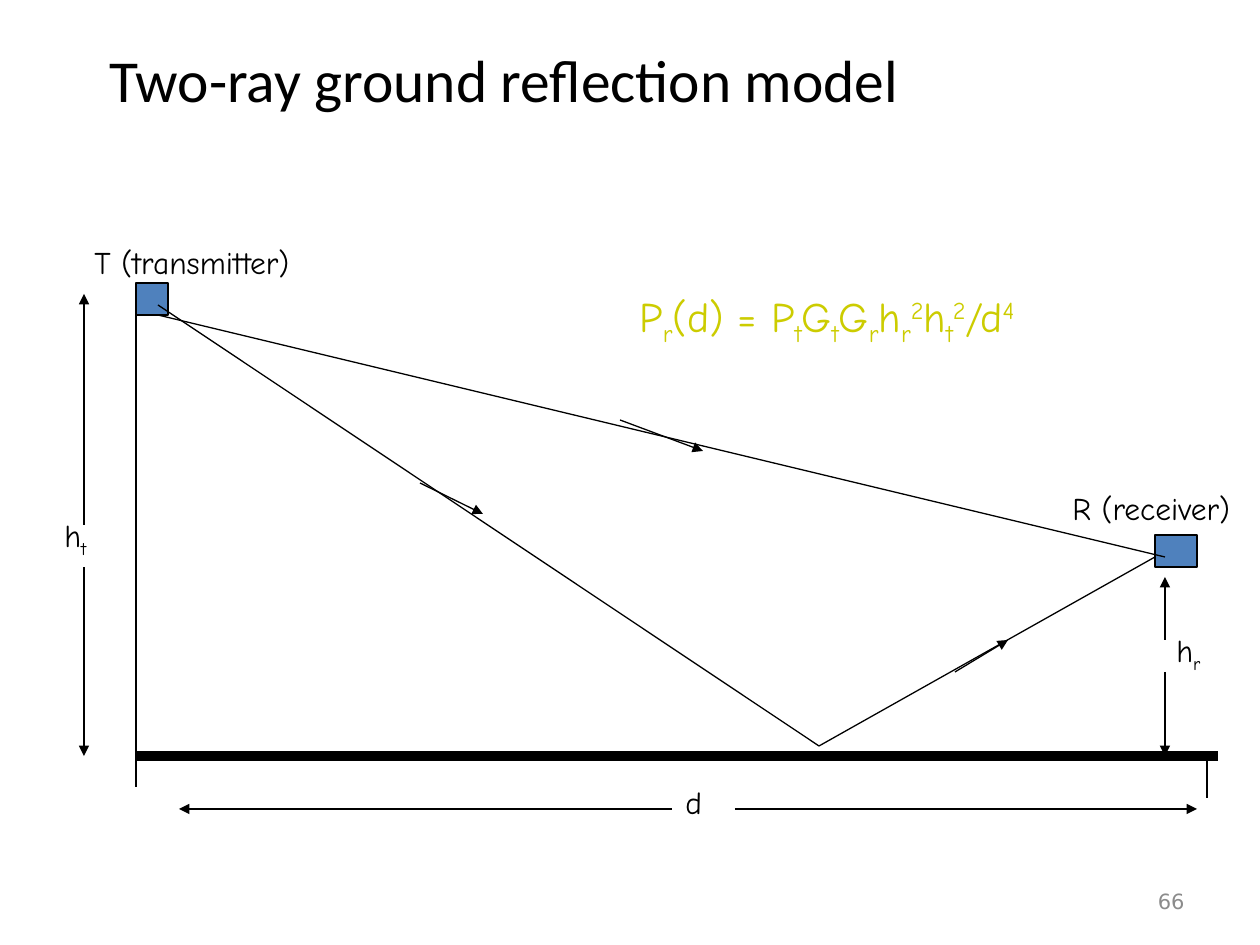
import pptx
import pptx.util
import pptx.dml.color
import pptx.enum.shapes
import pptx.enum.text
import pptx.oxml.ns
from lxml import etree

EMU_PER_PX = 914400 / 126
COLORS = {"ink": "000000", "node": "4F81BD", "formula": "CCCC00", "number": "8B8B8B"}
BASELINES = {"_": "-25000", "^": "30000"}
ALIGN = pptx.enum.text.PP_ALIGN
ANCHOR = pptx.enum.text.MSO_ANCHOR


def px(*lengths):
    return [pptx.util.Emu(round(length * EMU_PER_PX)) for length in lengths]


def write(shape, text, size=18, font="Comic Neue", color="ink", align=ALIGN.LEFT, anchor=ANCHOR.TOP):
    """Write one paragraph; _ lowers and ^ raises the character that follows."""
    frame = shape.text_frame
    frame.word_wrap = True
    frame.vertical_anchor = anchor
    paragraph = frame.paragraphs[0]
    paragraph.alignment = align
    pieces = [["", ""]]
    for character in text:
        if character in BASELINES:
            pieces.append([character, ""])
        elif pieces[-1][0] and pieces[-1][1]:
            pieces.append(["", character])
        else:
            pieces[-1][1] += character
    for mark, piece in pieces:
        run = paragraph.add_run()
        run.text = piece
        run.font.size = pptx.util.Pt(size)
        run.font.name = font
        run.font.color.rgb = pptx.dml.color.RGBColor.from_string(COLORS[color])
        if mark:
            run._r.get_or_add_rPr().set("baseline", BASELINES[mark])


presentation = pptx.Presentation()
presentation.slide_width, presentation.slide_height = px(1260, 945)
slide = presentation.slides.add_slide(presentation.slide_layouts[5])
shapes = slide.shapes
ink = pptx.dml.color.RGBColor.from_string(COLORS["ink"])

# Title
title = shapes.title
title.left, title.top, title.width, title.height = px(-63, 0, 1134, 158)
write(title, "Two-ray ground reflection model", size=34, font="Calibri",
      align=ALIGN.CENTER, anchor=ANCHOR.MIDDLE)

# Transmitter and receiver
for box in [(136, 283, 32, 32), (1155, 535, 42, 32)]:
    node = shapes.add_shape(pptx.enum.shapes.MSO_SHAPE.RECTANGLE, *px(*box))
    node.shadow.inherit = False
    node.fill.solid()
    node.fill.fore_color.rgb = pptx.dml.color.RGBColor.from_string(COLORS["node"])
    node.line.color.rgb = ink
    node.line.width = pptx.util.Pt(0.75)

# Lines: start x, start y, end x, end y, width, arrowhead
lines = [
    # Mast, ground and end mark
    (136, 294, 136, 787, 0.75, None),
    (136, 756, 1218, 756, 6, None),
    (1207, 756, 1207, 798, 0.75, None),
    # Distance and height dimensions
    (179, 809, 672, 809, 0.75, "headEnd"),
    (735, 809, 1197, 809, 0.75, "tailEnd"),
    (84, 294, 84, 525, 0.75, "headEnd"),
    (84, 567, 84, 756, 0.75, "tailEnd"),
    (1165, 577, 1165, 640, 0.75, "headEnd"),
    (1165, 672, 1165, 756, 0.75, "tailEnd"),
    # Reflected ray and direct ray
    (158, 305, 819, 746, 0.75, None),
    (819, 746, 1155, 557, 0.75, None),
    (158, 315, 1165, 557, 0.75, None),
    # Directions of travel
    (420, 483, 483, 514, 0.75, "tailEnd"),
    (955, 672, 1008, 640, 0.75, "tailEnd"),
    (620, 420, 703, 451, 0.75, "tailEnd"),
]
for *ends, width, arrowhead in lines:
    connector = shapes.add_connector(pptx.enum.shapes.MSO_CONNECTOR.STRAIGHT, *px(*ends))
    connector.line.color.rgb = ink
    connector.line.width = pptx.util.Pt(width)
    if arrowhead:
        etree.SubElement(connector.line._get_or_add_ln(),
                         pptx.oxml.ns.qn("a:" + arrowhead), type="triangle")
    etree.SubElement(connector._element.spPr, pptx.oxml.ns.qn("a:effectLst"))

# Labels, formula and slide number
labels = [
    ("T (transmitter)", (82, 237, 252, 50), {}),
    ("R (receiver)", (1060, 483, 199, 50), {}),
    ("h_t", (52, 510, 52, 55), {}),
    ("h_r", (1164, 625, 52, 55), {}),
    ("d", (673, 777, 43, 50), {}),
    ("P_r(d) = P_tG_tG_rh_r^2h_t^2/d^4", (627, 284, 437, 69), {"size": 24, "color": "formula"}),
    ("66", (903, 876, 294, 50), {"size": 12, "font": "DejaVu Sans", "color": "number",
                                 "align": ALIGN.RIGHT, "anchor": ANCHOR.MIDDLE}),
]
for text, box, text_format in labels:
    write(shapes.add_textbox(*px(*box)), text, **text_format)

presentation.save("out.pptx")
